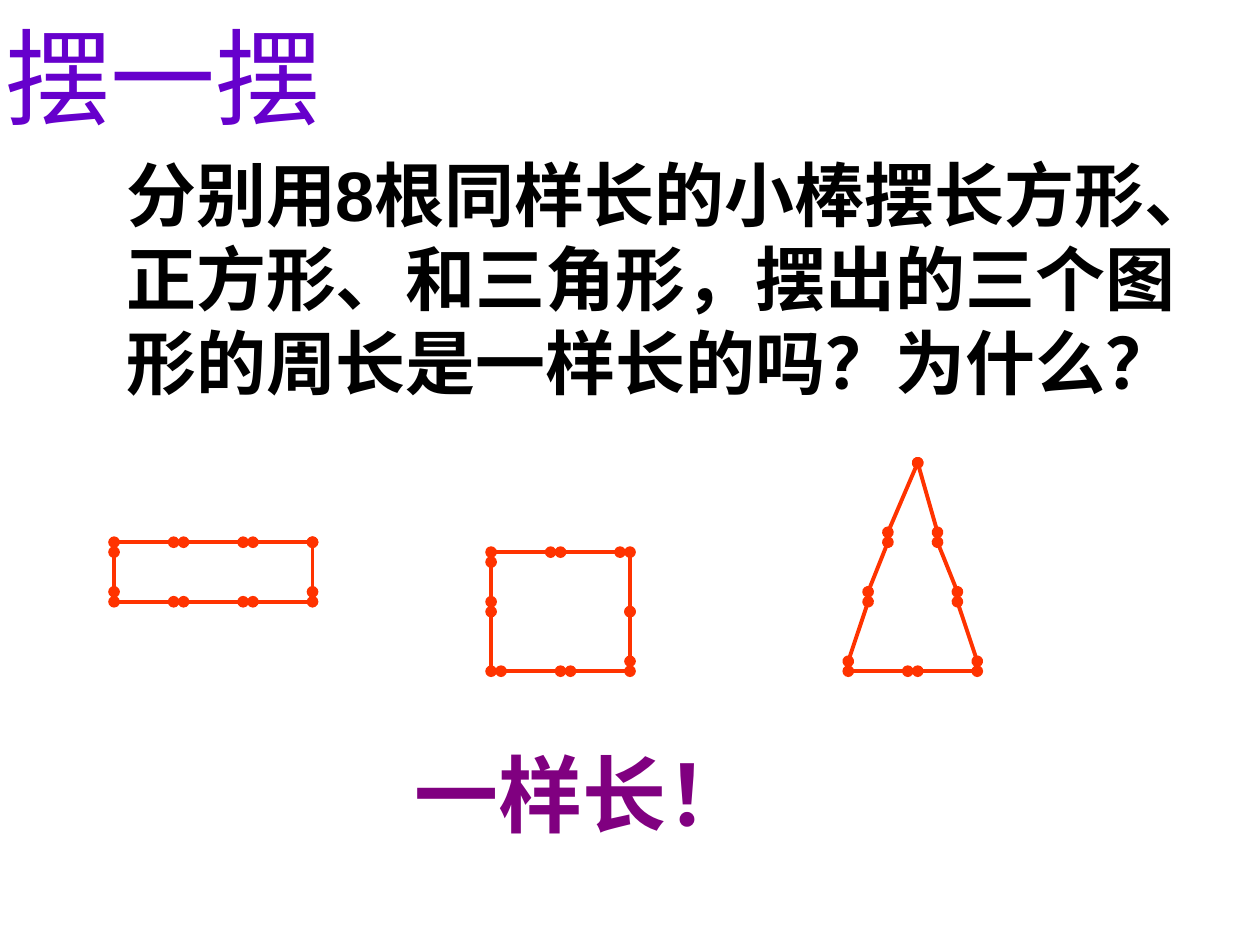
from lxml.etree import SubElement
from pptx import Presentation
from pptx.dml.color import RGBColor
from pptx.enum.shapes import MSO_CONNECTOR
from pptx.enum.text import MSO_ANCHOR, MSO_AUTO_SIZE, PP_ALIGN
from pptx.oxml.ns import qn
from pptx.util import Cm, Pt

BLACK = RGBColor(0x00, 0x00, 0x00)
VIOLET = RGBColor(0x66, 0x00, 0xCC)
PURPLE = RGBColor(0x80, 0x00, 0x80)
ORANGE = RGBColor(0xFF, 0x33, 0x00)

TITLE = ["摆一摆"]
QUESTION = [
    "分别用8根同样长的小棒摆长方形、",
    "正方形、和三角形，摆出的三个图",
    "形的周长是一样长的吗？为什么？",
]
ANSWER = ["一样长！"]

# Sticks are (x1, y1, x2, y2) in grid steps from the origin of each figure, given in cm.
GRID = 0.2
FIGURES = [
    {"name": "rectangle", "origin": (2.3, 10.93), "sticks": [
        (0, 0, 6, 0), (7, 0, 13, 0), (14, 0, 20, 0), (0, 5, 0, 1),
        (0, 6, 6, 6), (7, 6, 13, 6), (14, 6, 20, 6), (20, 5, 20, 0)]},
    {"name": "square", "origin": (9.9, 11.13), "sticks": [
        (0, 0, 6, 0), (7, 0, 13, 0), (0, 1, 0, 5), (0, 6, 0, 12),
        (14, 0, 14, 6), (14, 6, 14, 11), (1, 12, 7, 12), (8, 12, 14, 12)]},
    {"name": "triangle", "origin": (18.5, 9.33), "sticks": [
        (-7, 21, -1, 21), (0, 21, 6, 21), (-7, 20, -5, 14), (-5, 13, -3, 8),
        (6, 20, 4, 14), (4, 13, 2, 8), (2, 7, 0, 0), (-3, 7, 0, 0)]},
]


def write_text(shape, lines, font_name, size, color, bold, alignment=PP_ALIGN.LEFT):
    frame = shape.text_frame
    frame.word_wrap = False
    frame.auto_size = MSO_AUTO_SIZE.NONE
    frame.vertical_anchor = MSO_ANCHOR.TOP
    frame.text = "\n".join(lines)
    for paragraph in frame.paragraphs:
        properties = paragraph._p.get_or_add_pPr()
        properties.set("marL", "0")
        properties.set("indent", "0")
        SubElement(properties, qn("a:buNone"))
        paragraph.alignment = alignment
        paragraph.space_before = Pt(0)
        paragraph.line_spacing = Pt(size * 1.2)
        font = paragraph.font
        font.name, font.size, font.bold = font_name, Pt(size), bold
        font.color.rgb = color


def place(shape, left, top, width, height):
    shape.left, shape.top = Cm(left), Cm(top)
    shape.width, shape.height = Cm(width), Cm(height)


def add_stick(slide, origin, stick):
    x1, y1, x2, y2 = (
        Cm(origin[i % 2] + step * GRID) for i, step in enumerate(stick))
    connector = slide.shapes.add_connector(MSO_CONNECTOR.STRAIGHT, x1, y1, x2, y2)
    connector.line.color.rgb = ORANGE
    connector.line.width = Pt(2.25)
    line = connector.line._get_or_add_ln()
    for end in ("a:headEnd", "a:tailEnd"):
        SubElement(line, qn(end), type="oval")
    SubElement(connector._element.spPr, qn("a:effectLst"))


def main():
    presentation = Presentation()
    presentation.slide_width, presentation.slide_height = Cm(25.4), Cm(19.05)
    slide = presentation.slides.add_slide(presentation.slide_layouts[1])

    question = slide.placeholders[1]
    place(question, 2.29, 2.92, 22.53, 5.33)
    write_text(question, QUESTION, "Arial", 40, BLACK, True)

    title = slide.shapes.title
    place(title, 0, 0.13, 6.58, 2.8)
    title.text_frame.margin_left = title.text_frame.margin_right = 0
    write_text(title, TITLE, "Noto Sans CJK SC", 60, VIOLET, False, PP_ALIGN.CENTER)

    for figure in FIGURES:
        for stick in figure["sticks"]:
            add_stick(slide, figure["origin"], stick)

    answer = slide.shapes.add_textbox(Cm(8.1), Cm(14.84), Cm(7.32), Cm(2.29))
    write_text(answer, ANSWER, "Arial", 48, PURPLE, True)

    presentation.save("out.pptx")


if __name__ == "__main__":
    main()
